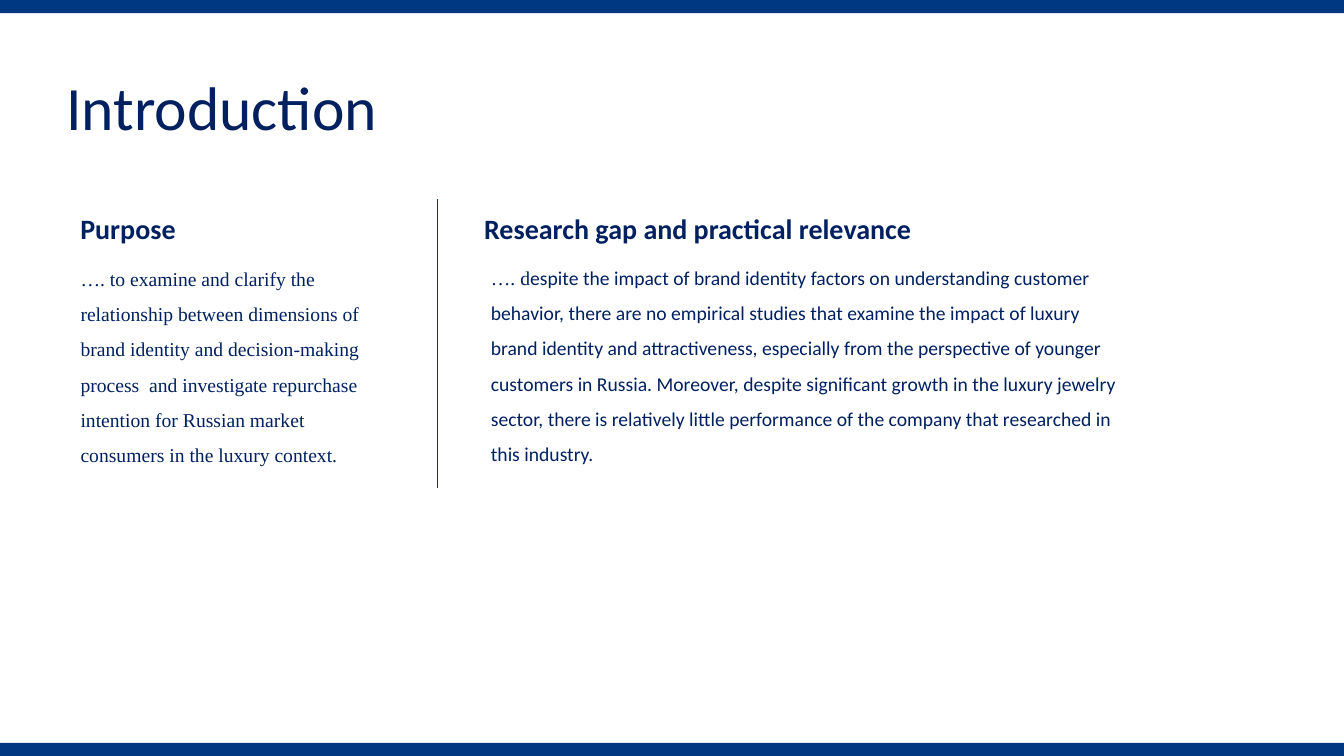
"""Builds the introduction slide with purpose and research gap columns."""
from lxml import etree
from pptx import Presentation
from pptx.dml.color import RGBColor
from pptx.enum.shapes import MSO_CONNECTOR, MSO_SHAPE
from pptx.enum.text import MSO_ANCHOR, PP_ALIGN
from pptx.oxml.ns import qn
from pptx.util import Inches, Pt

COLORS = {"bar": "013882", "text": "002060"}
SANS, SERIF = "Calibri", "Times New Roman"
WIDTH, HEIGHT, BAR = 13.33, 7.5, 0.13

TITLE = ("Introduction", (0.56, 0.48, 12.42, 1.23))
HEADINGS = [
    ("Purpose", (0.4, 2.01, 1.74, 0.49)),
    ("Research gap and practical relevance", (4.64, 2.01, 4.56, 0.49)),
]
BODIES = [
    ([("…. to examine and clarify the relationship between dimensions of brand "
       "identity and decision-making process  and investigate repurchase intention "
       "for Russian market consumers in the luxury context.", SERIF)],
     (0.7, 2.48, 3.08, 2.18)),
    ([("…. d", SERIF),
      ("espite the impact of brand identity factors on understanding customer "
       "behavior, there are no empirical studies that examine the impact of luxury "
       "brand identity and attractiveness, especially from the perspective of younger "
       "customers in Russia. Moreover, despite significant growth in the luxury "
       "jewelry sector, there is relatively little performance of the company that "
       "researched in this industry.", SANS)],
     (4.77, 2.47, 6.49, 2.18)),
]
DIVIDER = (4.34, 1.97, 4.34, 4.84)


def rgb(name):
    return RGBColor.from_string(COLORS[name])


def add_text(s, runs, box, size, spacing, inset=(0.1, 0.05), bold=False,
             align=PP_ALIGN.LEFT, anchor=MSO_ANCHOR.TOP):
    tf = s.shapes.add_textbox(*map(Inches, box)).text_frame
    tf.word_wrap = True
    tf.vertical_anchor = anchor
    tf.margin_left = tf.margin_right = Inches(inset[0])
    tf.margin_top = tf.margin_bottom = Inches(inset[1])
    p = tf.paragraphs[0]
    p.alignment, p.line_spacing = align, spacing
    p.font.size, p.font.bold = Pt(size), bold
    p.font.color.rgb = rgb("text")
    if len(runs) == 1:
        p.font.name = runs[0][1]
    for text, font in runs:
        r = p.add_run()
        r.text = text
        if len(runs) > 1:
            r.font.name = font


def add_bar(s, top):
    sp = s.shapes.add_shape(MSO_SHAPE.RECTANGLE, 0, Inches(top),
                            Inches(WIDTH), Inches(BAR))
    sp.shadow.inherit = False
    sp.fill.solid()
    sp.fill.fore_color.rgb = rgb("bar")
    sp.line.fill.background()


def add_divider(s):
    line = s.shapes.add_connector(MSO_CONNECTOR.STRAIGHT, *map(Inches, DIVIDER))
    line.line.color.rgb = rgb("bar")
    line.line.width = Pt(0.5)
    etree.SubElement(line._element.spPr, qn("a:effectLst"))


def main():
    prs = Presentation()
    prs.slide_width, prs.slide_height = Inches(WIDTH), Inches(HEIGHT)
    s = prs.slides.add_slide(prs.slide_layouts[6])
    text, box = TITLE
    add_text(s, [(text, SANS)], box, 44, 0.9, (0.1, 0.1), anchor=MSO_ANCHOR.MIDDLE)
    for top in (HEIGHT - BAR, 0):
        add_bar(s, top)
    add_divider(s)
    for text, box in HEADINGS:
        add_text(s, [(text, SANS)], box, 20, 0.9, (0.13, 0.13), True, PP_ALIGN.CENTER)
    for runs, box in BODIES:
        add_text(s, runs, box, 14, 1.5)
    prs.save("out.pptx")


if __name__ == "__main__":
    main()
